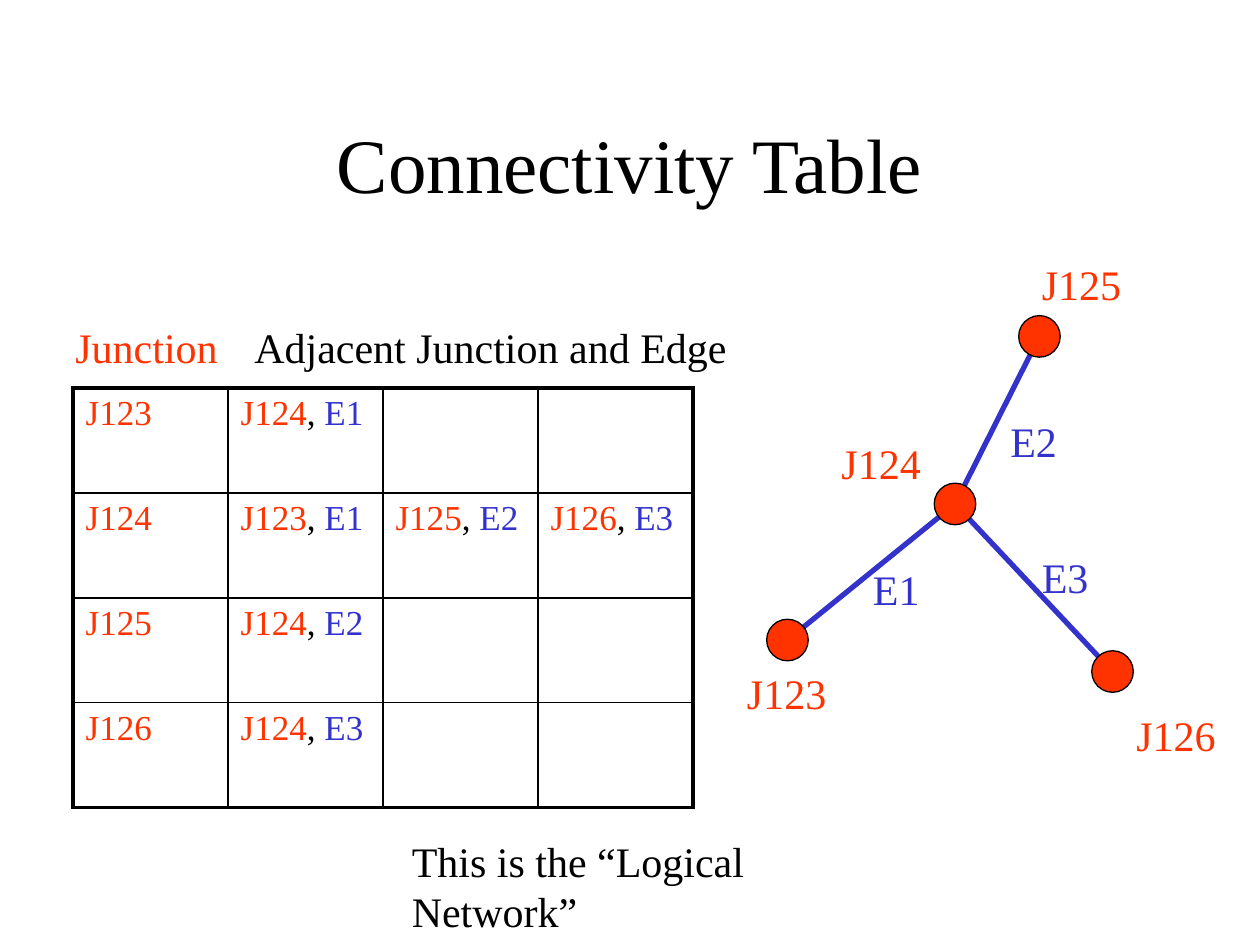
from lxml.etree import SubElement
from pptx import Presentation
from pptx.dml.color import RGBColor
from pptx.enum.shapes import MSO_CONNECTOR, MSO_SHAPE
from pptx.enum.text import MSO_ANCHOR, MSO_AUTO_SIZE, PP_ALIGN
from pptx.oxml.ns import qn
from pptx.util import Inches, Pt

RED, BLUE, BLACK = "FF3300", "3333CC", "000000"
FONT = "Times New Roman"
TITLE = "Connectivity Table"
NODES = {
    "J123": (6.25, 5.08),
    "J124": (7.58, 4),
    "J125": (8.25, 2.67),
    "J126": (8.83, 5.33),
}
EDGES = {
    "E1": ("J123", "J124"),
    "E2": ("J124", "J125"),
    "E3": ("J124", "J126"),
}
LABELS = [
    ("J124", 6.58, 3.42, 0.83, RED),
    ("J125", 8.17, 2, 0.83, RED),
    ("J123", 5.83, 5.25, 0.83, RED),
    ("J126", 8.92, 5.58, 0.83, RED),
    ("E1", 6.83, 4.42, 0.57, BLUE),
    ("E3", 8.17, 4.33, 0.57, BLUE),
    ("E2", 7.92, 3.25, 0.57, BLUE),
    ("Junction", 0.5, 2.5, 1.33, RED),
    ("Adjacent Junction and Edge", 1.92, 2.5, 3.95, BLACK),
    ("This is the “Logical Network”", 3.17, 6.58, 4.23, BLACK),
]
COLS = 4
DOT = 0.33


def color(code):
    return RGBColor.from_string(code)


def style(run, size, code):
    run.font.name = FONT
    run.font.size = Pt(size)
    run.font.color.rgb = color(code)


def add_title(slide):
    title = slide.shapes.title
    title.left, title.top = Inches(0.75), Inches(0.67)
    title.width, title.height = Inches(8.5), Inches(1.25)
    frame = title.text_frame
    frame.text = TITLE
    frame.vertical_anchor = MSO_ANCHOR.MIDDLE
    para = frame.paragraphs[0]
    para.alignment = PP_ALIGN.CENTER
    style(para.runs[0], 44, BLACK)


def add_edge(slide, start, end):
    ends = [Inches(n) for n in NODES[start] + NODES[end]]
    line = slide.shapes.add_connector(MSO_CONNECTOR.STRAIGHT, *ends)
    line.line.color.rgb = color(BLUE)
    line.line.width = Pt(3)
    SubElement(line._element.spPr, qn("a:effectLst"))


def add_node(slide, x, y):
    dot = slide.shapes.add_shape(
        MSO_SHAPE.OVAL, Inches(x - DOT / 2), Inches(y - DOT / 2), Inches(DOT), Inches(DOT))
    dot.shadow.inherit = False
    dot.fill.solid()
    dot.fill.fore_color.rgb = color(RED)
    dot.line.color.rgb = color(BLACK)
    dot.line.width = Pt(0.75)


def add_label(slide, text, x, y, width, code):
    box = slide.shapes.add_textbox(Inches(x), Inches(y), Inches(width), Inches(0.5))
    frame = box.text_frame
    frame.word_wrap = False
    frame.auto_size = MSO_AUTO_SIZE.SHAPE_TO_FIT_TEXT
    frame.text = text
    style(frame.paragraphs[0].runs[0], 24, code)


def add_border(cell, side, width):
    line = SubElement(cell._tc.get_or_add_tcPr(), qn("a:ln" + side), w=str(Pt(width)))
    fill = SubElement(line, qn("a:solidFill"))
    SubElement(fill, qn("a:srgbClr"), val=BLACK)


def links(node):
    """List the neighbour and edge pairs of a junction."""
    return [(b if node == a else a, edge)
            for edge, (a, b) in EDGES.items() if node in (a, b)]


def add_grid(slide):
    count = len(NODES)
    shape = slide.shapes.add_table(
        count, COLS, Inches(0.58), Inches(3.08), Inches(4.92), Inches(3.33))
    table = shape.table
    table.first_row = table.horz_banding = False
    for r, node in enumerate(NODES):
        cells = [[(node, RED)]]
        cells += [[(near, RED), (", ", BLACK), (edge, BLUE)] for near, edge in links(node)]
        for c in range(COLS):
            cell = table.cell(r, c)
            outer = {"L": c == 0, "R": c == COLS - 1, "T": r == 0, "B": r == count - 1}
            for side, edge in outer.items():
                add_border(cell, side, 2.25 if edge else 1)
            cell.fill.background()
            para = cell.text_frame.paragraphs[0]
            for text, code in cells[c] if c < len(cells) else []:
                run = para.add_run()
                run.text = text
                style(run, 20, code)


def main():
    deck = Presentation()
    deck.slide_width, deck.slide_height = Inches(10), Inches(7.5)
    slide = deck.slides.add_slide(deck.slide_layouts[5])
    for start, end in EDGES.values():
        add_edge(slide, start, end)
    add_title(slide)
    for x, y in NODES.values():
        add_node(slide, x, y)
    add_grid(slide)
    for label in LABELS:
        add_label(slide, *label)
    deck.save("out.pptx")


if __name__ == "__main__":
    main()
